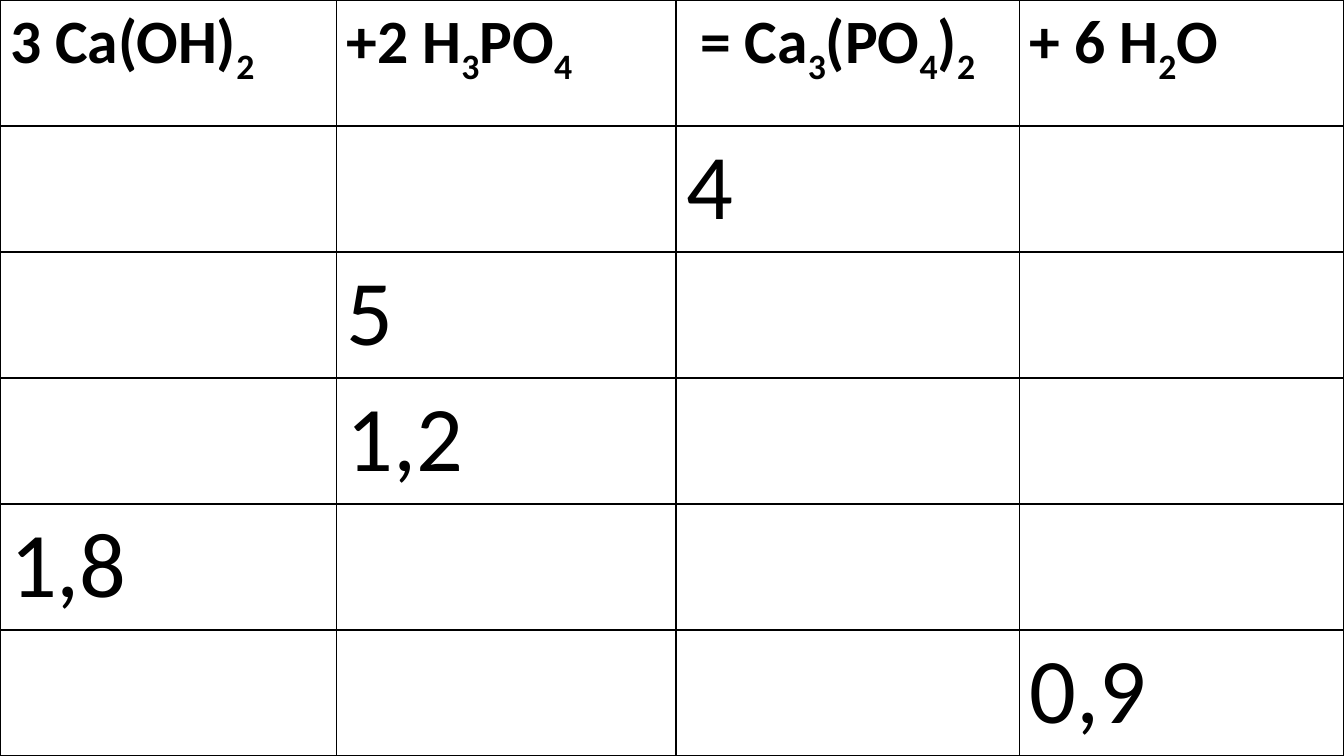
from dataclasses import dataclass

from lxml import etree
from pptx import Presentation
from pptx.dml.color import RGBColor
from pptx.oxml.ns import qn
from pptx.util import Inches, Pt


@dataclass(frozen=True)
class Theme:
    font: str = "Calibri"
    ink: str = "000000"
    paper: str = "FFFFFF"
    formula_size: int = 44
    value_size: int = 66
    border_width: int = 1
    subscript: int = -25000


THEME = Theme()
SLIDE_WIDTH, SLIDE_HEIGHT = 13.33, 7.5
COLUMN_WIDTHS = [3.34, 3.37, 3.41, 3.22]

# A digit after "_" is a subscript.
EQUATION = ["3 Ca(OH)_2", "+2 H_3PO_4", " = Ca_3(PO_4)_2", "+ 6 H_2O"]
KNOWN_AMOUNTS = [
    ["", "", "4", ""],
    ["", "5", "", ""],
    ["", "1,2", "", ""],
    ["1,8", "", "", ""],
    ["", "", "", "0,9"],
]


def style_paragraph(paragraph, size, bold):
    font = paragraph.font
    font.name = THEME.font
    font.size = Pt(size)
    font.bold = bold
    font.color.rgb = RGBColor.from_string(THEME.ink)


def write_formula(paragraph, formula):
    first, *rest = formula.split("_")
    paragraph.add_run().text = first
    for piece in rest:
        subscript = paragraph.add_run()
        subscript.text = piece[0]
        subscript._r.get_or_add_rPr().set("baseline", str(THEME.subscript))
        if piece[1:]:
            paragraph.add_run().text = piece[1:]
    style_paragraph(paragraph, THEME.formula_size, True)


def write_amount(paragraph, amount):
    if amount:
        paragraph.add_run().text = amount
        style_paragraph(paragraph, THEME.value_size, False)


def paint_cell(cell):
    cell.fill.solid()
    cell.fill.fore_color.rgb = RGBColor.from_string(THEME.paper)
    properties = cell._tc.get_or_add_tcPr()
    for position, side in enumerate(("a:lnL", "a:lnR", "a:lnT", "a:lnB")):
        border = etree.Element(qn(side), w=str(Pt(THEME.border_width)))
        line_fill = etree.SubElement(border, qn("a:solidFill"))
        etree.SubElement(line_fill, qn("a:srgbClr"), val=THEME.ink)
        properties.insert(position, border)


def add_reaction_table(slide, left, top, width, height):
    """Equation in the first row, known amounts below it."""
    row_count = 1 + len(KNOWN_AMOUNTS)
    table = slide.shapes.add_table(
        row_count, len(EQUATION),
        Inches(left), Inches(top), Inches(width), Inches(height),
    ).table
    for column, share in zip(table.columns, COLUMN_WIDTHS):
        column.width = Inches(width * share / sum(COLUMN_WIDTHS))
    for row in table.rows:
        row.height = Inches(height / row_count)
    for r, texts in enumerate([EQUATION, *KNOWN_AMOUNTS]):
        write = write_amount if r else write_formula
        for c, text in enumerate(texts):
            cell = table.cell(r, c)
            paint_cell(cell)
            write(cell.text_frame.paragraphs[0], text)


def main():
    presentation = Presentation()
    presentation.slide_width = Inches(SLIDE_WIDTH)
    presentation.slide_height = Inches(SLIDE_HEIGHT)
    slide = presentation.slides.add_slide(presentation.slide_layouts[6])
    add_reaction_table(slide, 0, 0, SLIDE_WIDTH, SLIDE_HEIGHT)
    presentation.save("out.pptx")


if __name__ == "__main__":
    main()
